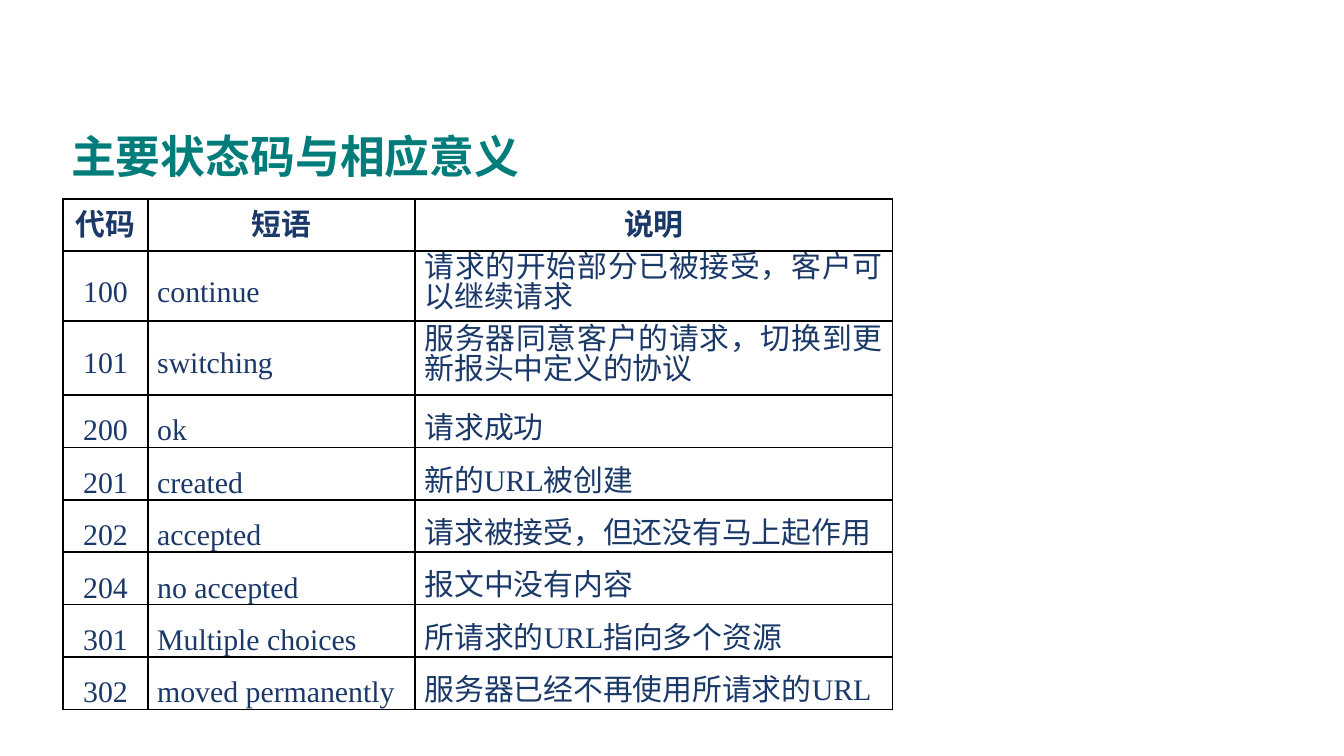
from lxml.etree import SubElement as Sub
from pptx import Presentation
from pptx.dml.color import RGBColor as Rgb
from pptx.enum.lang import MSO_LANGUAGE_ID as Lang
from pptx.enum.text import MSO_ANCHOR as Anchor, PP_ALIGN as Align
from pptx.oxml.ns import qn
from pptx.util import Inches, Pt

HUES = {"title": "007D7A", "text": "1A3868", "line": "000000", "fill": "FFFFFF"}
FONT = "Times New Roman"


def write(frame, text, size=16, hue="text", bold=False, align=Align.LEFT, lead=None):
    para = frame.paragraphs[0]
    para.alignment = align
    if lead:
        para.line_spacing = Pt(lead)
    run = para.add_run()
    run.text = text
    font = run.font
    font.name, font.size, font.bold = FONT, Pt(size), bold
    font.color.rgb = Rgb.from_string(HUES[hue])
    font.language_id = Lang.SIMPLIFIED_CHINESE


def frame_cell(cell):
    """Draw a 1 pt line on each side and fill the cell."""
    props = cell._tc.get_or_add_tcPr()
    for side in ("lnL", "lnR", "lnT", "lnB"):
        line = Sub(props, qn(f"a:{side}"), w=str(Pt(1)))
        Sub(Sub(line, qn("a:solidFill")), qn("a:srgbClr"), val=HUES["line"])
    cell.fill.solid()
    cell.fill.fore_color.rgb = Rgb.from_string(HUES["fill"])


# Wide slide, 16 to 9
deck = Presentation()
deck.slide_width = Inches(10)
deck.slide_height = deck.slide_width * 9 // 16
slide = deck.slides.add_slide(deck.slide_layouts[5])

# Title
title = slide.shapes.title
title.left, title.top = Inches(0.43), Inches(0.92)
title.width, title.height = Inches(4.33), Inches(0.47)
title.text_frame.vertical_anchor = Anchor.MIDDLE
write(title.text_frame, "主要状态码与相应意义", size=24, hue="title", bold=True)

# Status codes
rows = [
    ("代码", "短语", "说明"),
    ("100", "continue", "请求的开始部分已被接受，客户可以继续请求"),
    ("101", "switching", "服务器同意客户的请求，切换到更新报头中定义的协议"),
    ("200", "ok", "请求成功"),
    ("201", "created", "新的URL被创建"),
    ("202", "accepted", "请求被接受，但还没有马上起作用"),
    ("204", "no accepted", "报文中没有内容"),
    ("301", "Multiple choices", "所请求的URL指向多个资源"),
    ("302", "moved permanently", "服务器已经不再使用所请求的URL"),
]
wides = [0.63, 1.99, 3.55]
highs = [0.39, 0.52, 0.55] + [0.39] * 6

# Table grid
table = slide.shapes.add_table(
    len(rows), len(wides), Inches(0.47), Inches(1.48),
    Inches(sum(wides)), Inches(sum(highs))).table
table.first_row = table.horz_banding = False
for col, wide in zip(table.columns, wides):
    col.width = Inches(wide)
for row, high in zip(table.rows, highs):
    row.height = Inches(high)

# Table text: most cells are pushed down by one line
for r, row in enumerate(rows):
    head, tall = r == 0, r in (1, 2)
    for c, text in enumerate(row):
        cell = table.cell(r, c)
        long = tall and c == 2
        lead = 16 if long else 12 if head or tall else 14
        cell.margin_left = cell.margin_right = Inches(0.07)
        cell.margin_top = 0 if long else Pt(lead)
        cell.margin_bottom = 0
        top = head or (c == 2 and not tall)
        cell.vertical_anchor = Anchor.TOP if top else Anchor.MIDDLE
        align = Align.CENTER if head or c == 0 else Align.JUSTIFY
        write(cell.text_frame, text, bold=head, align=align, lead=lead)
        frame_cell(cell)

deck.save("out.pptx")
